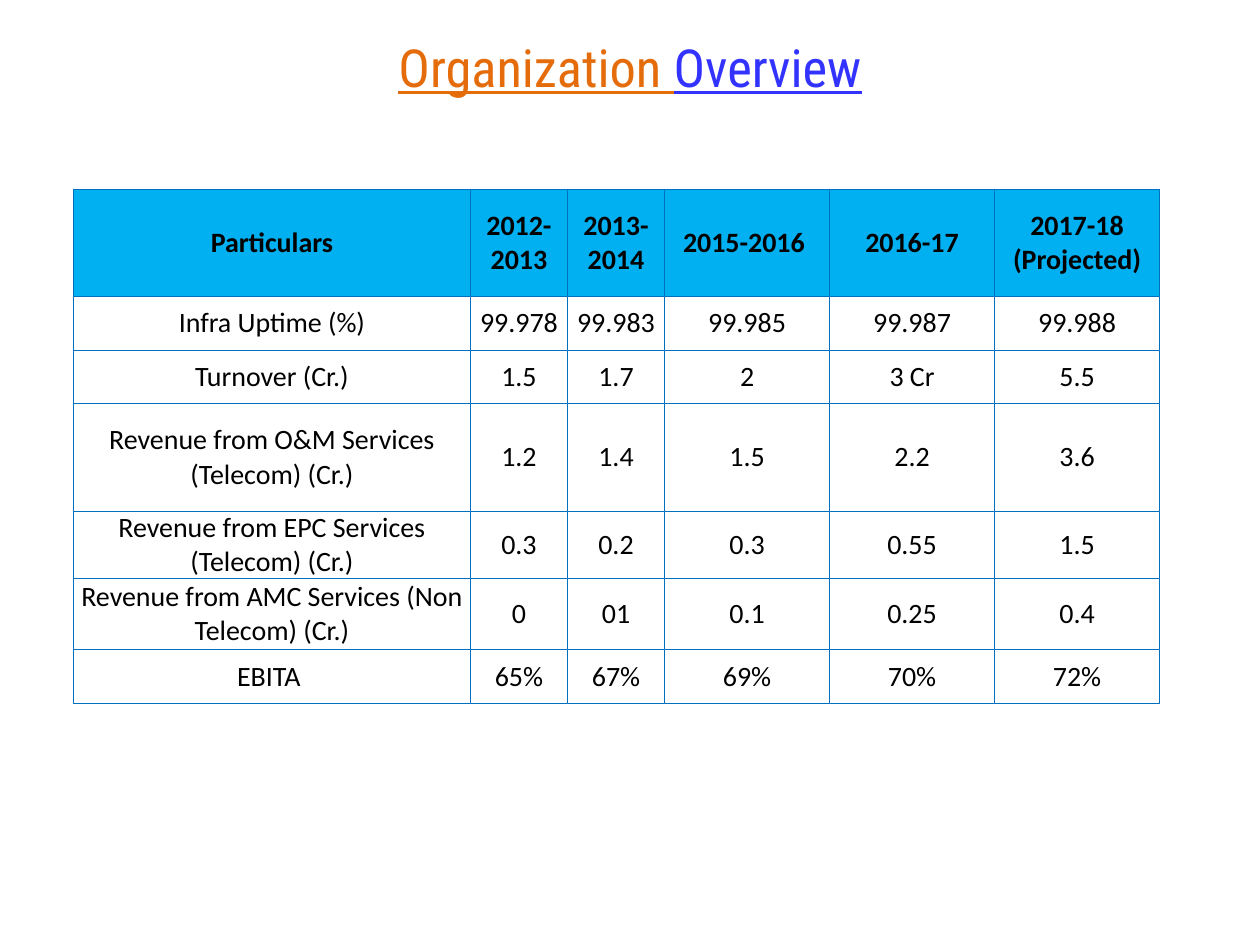
from dataclasses import dataclass

from lxml import etree
from pptx import Presentation
from pptx.dml.color import RGBColor
from pptx.enum.text import MSO_ANCHOR, MSO_AUTO_SIZE, PP_ALIGN
from pptx.oxml.ns import qn
from pptx.slide import Slide
from pptx.table import _Cell
from pptx.util import Pt

CENTER = PP_ALIGN.CENTER
MIDDLE = MSO_ANCHOR.MIDDLE
GROW = MSO_AUTO_SIZE.SHAPE_TO_FIT_TEXT
HEADER_FILL = "00B0F0"
BORDER_COLOR = "0070C0"
COLUMN_WIDTHS = (226.8, 55.5, 55.5, 94.3, 94.3, 94.3)


@dataclass(frozen=True)
class Record:
    """One table row: its height in points and its cell texts."""

    height: float
    texts: tuple[str, ...]
    heading: bool = False


RECORDS = (
    Record(61.2, ("Particulars", "2012-2013", "2013-2014", "2015-2016 ", "2016-17",
                  "2017-18\n(Projected)"), heading=True),
    Record(30.8, ("Infra Uptime (%)", "99.978", "99.983", "99.985", "99.987", "99.988")),
    Record(30.8, ("Turnover (Cr.)", "1.5", "1.7", "2", "3 Cr", "5.5")),
    Record(61.2, ("Revenue from O&M Services (Telecom) (Cr.)",
                  "1.2", "1.4", "1.5", "2.2", "3.6")),
    Record(30.8, ("Revenue from EPC Services (Telecom) (Cr.)",
                  "0.3", "0.2", "0.3", "0.55", "1.5")),
    Record(41, ("Revenue from AMC Services (Non Telecom) (Cr.)",
                "0", "01", "0.1", "0.25", "0.4")),
    Record(30.8, ("EBITA ", "65%", "67%", "69%", "70%", "72%")),
)


def color(value: str) -> RGBColor:
    """Turn a hex string into a colour."""
    return RGBColor.from_string(value)


def add_title(slide: Slide) -> None:
    """Add the underlined two-colour title."""
    title = slide.shapes.add_textbox(Pt(185.8), Pt(16.6), Pt(348.5), Pt(43.9))
    frame = title.text_frame
    frame.word_wrap = True
    frame.auto_size = GROW
    heading = frame.paragraphs[0]
    heading.alignment = CENTER
    heading.font.name = "Roboto Condensed"
    heading.font.size = Pt(30)
    heading.font.underline = True
    for word, tint in (("Organization ", "E46C0A"), ("Overview", "3333FF")):
        run = heading.add_run()
        run.text = word
        run.font.color.rgb = color(tint)


def add_borders(cell: _Cell) -> None:
    """Draw a thin line on all four sides of a cell."""
    properties = cell._tc.get_or_add_tcPr()
    for side in ("a:lnL", "a:lnR", "a:lnT", "a:lnB"):
        line = etree.SubElement(properties, qn(side), w=str(Pt(0.5)))
        fill = etree.SubElement(line, qn("a:solidFill"))
        etree.SubElement(fill, qn("a:srgbClr"), val=BORDER_COLOR)


def fill_cell(cell: _Cell, text: str, heading: bool) -> None:
    """Write and style one table cell."""
    cell.text = text
    cell.vertical_anchor = MIDDLE
    cell.margin_left = cell.margin_right = cell.margin_top = cell.margin_bottom = 0
    add_borders(cell)
    if heading:
        cell.fill.solid()
        cell.fill.fore_color.rgb = color(HEADER_FILL)
    else:
        cell.fill.background()
    for paragraph in cell.text_frame.paragraphs:
        paragraph.alignment = CENTER
        paragraph.font.name = "Calibri"
        paragraph.font.size = Pt(16)
        paragraph.font.bold = heading
        paragraph.font.color.rgb = color("000000")


def add_overview(slide: Slide) -> None:
    """Add the table of yearly figures."""
    overview = slide.shapes.add_table(
        len(RECORDS), len(COLUMN_WIDTHS), Pt(42), Pt(108),
        Pt(sum(COLUMN_WIDTHS)), Pt(sum(record.height for record in RECORDS)),
    ).table
    overview.first_row = overview.horz_banding = False
    for column, width in zip(overview.columns, COLUMN_WIDTHS):
        column.width = Pt(width)
    for row, record in zip(overview.rows, RECORDS):
        row.height = Pt(record.height)
        for cell, text in zip(row.cells, record.texts):
            fill_cell(cell, text, record.heading)


def main() -> None:
    """Build and save the organization overview slide."""
    presentation = Presentation()
    presentation.slide_width, presentation.slide_height = Pt(720), Pt(540)
    slide = presentation.slides.add_slide(presentation.slide_layouts[6])
    add_title(slide)
    add_overview(slide)
    presentation.save("out.pptx")


if __name__ == "__main__":
    main()
